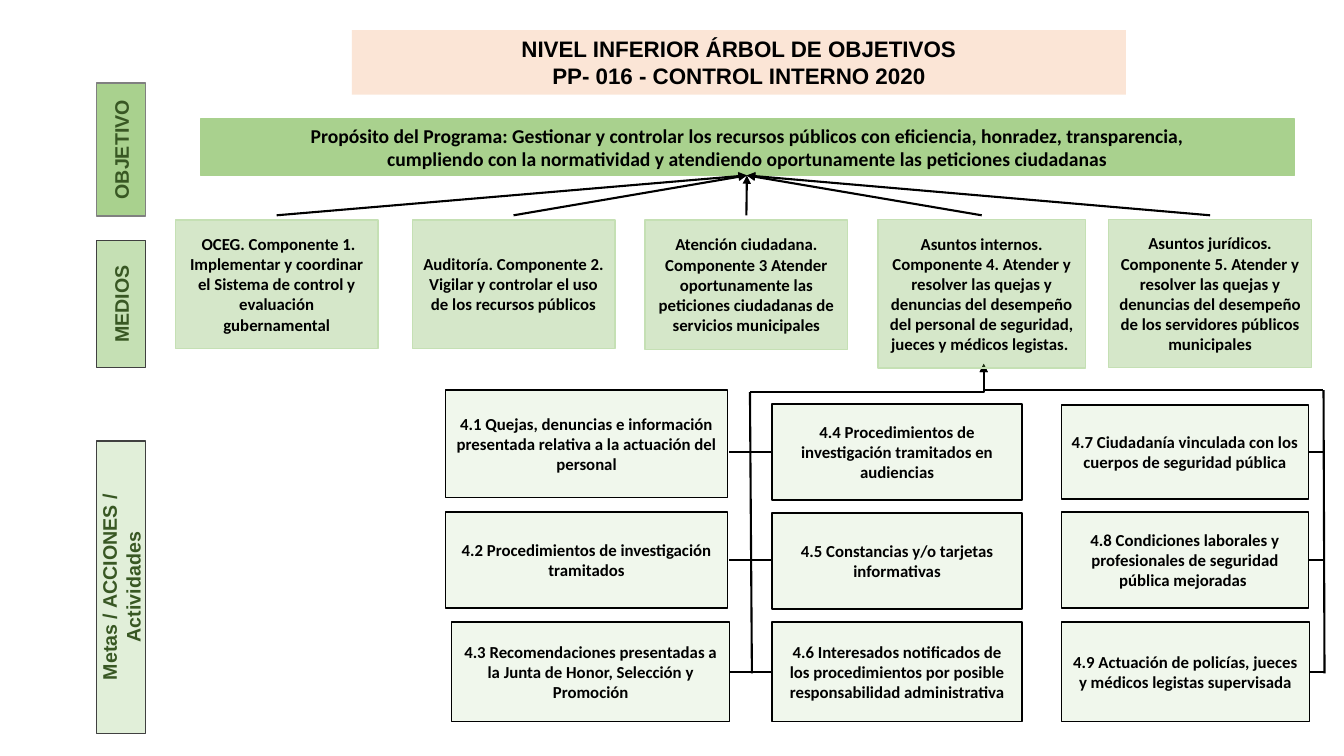
from pptx import Presentation
from pptx.util import Pt
from pptx.dml.color import RGBColor as Rgb
from pptx.enum.shapes import MSO_SHAPE as Kind, MSO_CONNECTOR as Link
from pptx.enum.text import PP_ALIGN as Align, MSO_ANCHOR as Anchor, MSO_AUTO_SIZE as Auto
from pptx.oxml.ns import qn
from lxml.etree import SubElement as Sub

HUES = {
    "ink": "000000", "peach": "FBE5D6", "green": "A9D18E", "pale": "C5E0B4",
    "leaf": "70AD47", "moss": "385723", "gray": "808080", "dark": "404040",
}


class Tree:
    """Draws the parts of an objective tree on one slide."""

    def __init__(self, slide):
        self.slide = slide
        self.shapes = slide.shapes

    def hue(self, name):
        return Rgb.from_string(HUES[name])

    def label(self, shape, lines, size, font, hue="ink", anchor=Anchor.MIDDLE):
        frame = shape.text_frame
        frame.word_wrap = True
        frame.auto_size = Auto.NONE
        frame.vertical_anchor = anchor
        for i, line in enumerate(lines):
            para = frame.add_paragraph() if i else frame.paragraphs[0]
            para.alignment = Align.CENTER
            para.line_spacing = 1.0
            para.space_before = Pt(0)
            run = para.add_run()
            run.text = line
            run.font.size = Pt(size)
            run.font.name = font
            run.font.bold = True
            run.font.color.rgb = self.hue(hue)

    def title(self, lines, x, y, w, h):
        shape = self.shapes.title
        shape.left, shape.top, shape.width, shape.height = Pt(x), Pt(y), Pt(w), Pt(h)
        shape.fill.solid()
        shape.fill.fore_color.rgb = self.hue("peach")
        self.label(shape, lines, 16, "Arial", anchor=Anchor.TOP)

    def box(self, x, y, w, h, fill, edge, alpha=100):
        shape = self.shapes.add_shape(Kind.FLOWCHART_PROCESS, Pt(x), Pt(y), Pt(w), Pt(h))
        shape.shadow.inherit = False
        shape.fill.solid()
        shape.fill.fore_color.rgb = self.hue(fill)
        if alpha < 100:
            tint = shape.element.spPr.find(".//" + qn("a:srgbClr"))
            Sub(tint, qn("a:alpha")).set("val", str(alpha * 1000))
        shape.line.color.rgb = self.hue(edge)
        shape.line.width = Pt(1)
        return shape

    def side(self, text, mid, size, fill, edge, alpha=100):
        shape = self.box(86.4 - size / 2, mid - 17.65, size, 35.3, fill, edge, alpha)
        shape.rotation = 270
        self.label(shape, [text], 14, "Arial", "moss")

    def card(self, text, x, y, w, h, fill, edge, alpha):
        shape = self.box(x, y, w, h, fill, edge, alpha)
        self.label(shape, [text], 12, "Calibri")

    def line(self, x1, y1, x2, y2, head=False, bent=False):
        kind = Link.ELBOW if bent else Link.STRAIGHT
        line = self.shapes.add_connector(kind, Pt(x1), Pt(y1), Pt(x2), Pt(y2))
        line.line.color.rgb = self.hue("ink")
        line.line.width = Pt(1.5)
        props = line.element.spPr if hasattr(line, "element") else line._element.spPr
        if bent:
            props.find(qn("a:prstGeom")).set("prst", "bentConnector2")
        if head:
            Sub(props.find(qn("a:ln")), qn("a:tailEnd")).set("type", "triangle")
        Sub(props, qn("a:effectLst"))


SIDES = [
    ("OBJETIVO", 106.9, 95, "green", "gray"),
    ("MEDIOS", 217.1, 90.7, "pale", "dark"),
    ("Metas / ACCIONES / Actividades", 419.4, 208.8, "pale", "dark", 50),
]
GOAL = [
    "Propósito del Programa: Gestionar y controlar los recursos públicos con eficiencia, honradez, transparencia,",
    "cumpliendo con la normatividad y atendiendo oportunamente las peticiones ciudadanas",
]
MEANS = [
    (" OCEG. Componente 1. Implementar y coordinar el Sistema de control y evaluación gubernamental",
     125.3, 144.7, 91.8),
    ("Auditoría. Componente 2. Vigilar y controlar el uso de los recursos públicos", 294.5, 144.7, 91.8),
    ("Atención ciudadana. Componente 3 Atender oportunamente las peticiones ciudadanas de servicios municipales",
     460.8, 144.7, 92.5),
    ("Asuntos internos. Componente 4. Atender y resolver las quejas y denuncias del desempeño "
     "del personal de seguridad, jueces y médicos legistas. ", 627.1, 148.3, 105.8),
    ("Asuntos jurídicos. Componente 5. Atender y resolver las quejas y denuncias del desempeño "
     "de los servidores públicos municipales", 792, 144.7, 105.5),
]
TASKS = [
    ("4.1 Quejas, denuncias e información presentada relativa a la actuación del personal",
     318.2, 278.6, 201.6, 77),
    ("4.2 Procedimientos de investigación tramitados", 318.2, 365.8, 201.6, 68.4),
    ("4.3 Recomendaciones presentadas a la Junta de Honor, Selección y Promoción",
     322.6, 444.2, 198.7, 71.3),
    ("4.4 Procedimientos de investigación tramitados en audiencias", 551.5, 288.7, 178.6, 68.4),
    ("4.5 Constancias y/o tarjetas informativas", 551.5, 366.5, 178.6, 68.4),
    ("4.6 Interesados notificados de los procedimientos por posible responsabilidad administrativa",
     551.5, 444.2, 178.6, 71.3),
    ("4.7 Ciudadanía vinculada con los cuerpos de seguridad pública", 758.2, 289.4, 176.4, 67),
    ("4.8 Condiciones laborales y profesionales de seguridad pública mejoradas ",
     758.2, 365.8, 176.4, 68.4),
    ("4.9 Actuación de policías, jueces y médicos legistas supervisada", 758.2, 444.2, 177.1, 71.3),
]
TRUNKS = [
    (535.7, 280.1, 537.1, 551.5, 520.6),
    (945.4, 278.6, 946.1, 946.1, 934.9),
]


def main():
    deck = Presentation()
    deck.slide_width, deck.slide_height = Pt(960), Pt(540)
    tree = Tree(deck.slides.add_slide(deck.slide_layouts[5]))
    tree.title(["NIVEL INFERIOR ÁRBOL DE OBJETIVOS", "PP- 016 - CONTROL INTERNO 2020"],
               251.3, 21.6, 553, 46.1)
    for side in SIDES:
        tree.side(*side)
    goal = tree.box(143.3, 85, 781.2, 40.3, "green", "green")
    tree.label(goal, GOAL, 14, "Calibri")
    for _, x, w, _ in MEANS:
        tree.line(x + w / 2, 153.8, 533.5, 125.3, head=True)
    for task in TASKS:
        tree.card(*task, "pale", "ink", 25)
    for x, top, foot, start, end in TRUNKS:
        tree.line(x, top, foot, 481)
        for y in (322.6, 400, 479.8):
            tree.line(start, y, end, y)
        tree.line(x, top, 702.7, 259.9, head=True, bent=True)
    for text, x, w, h in MEANS:
        tree.card(text, x, 157, w, h, "leaf", "pale", 29)
    deck.save("out.pptx")


if __name__ == "__main__":
    main()
